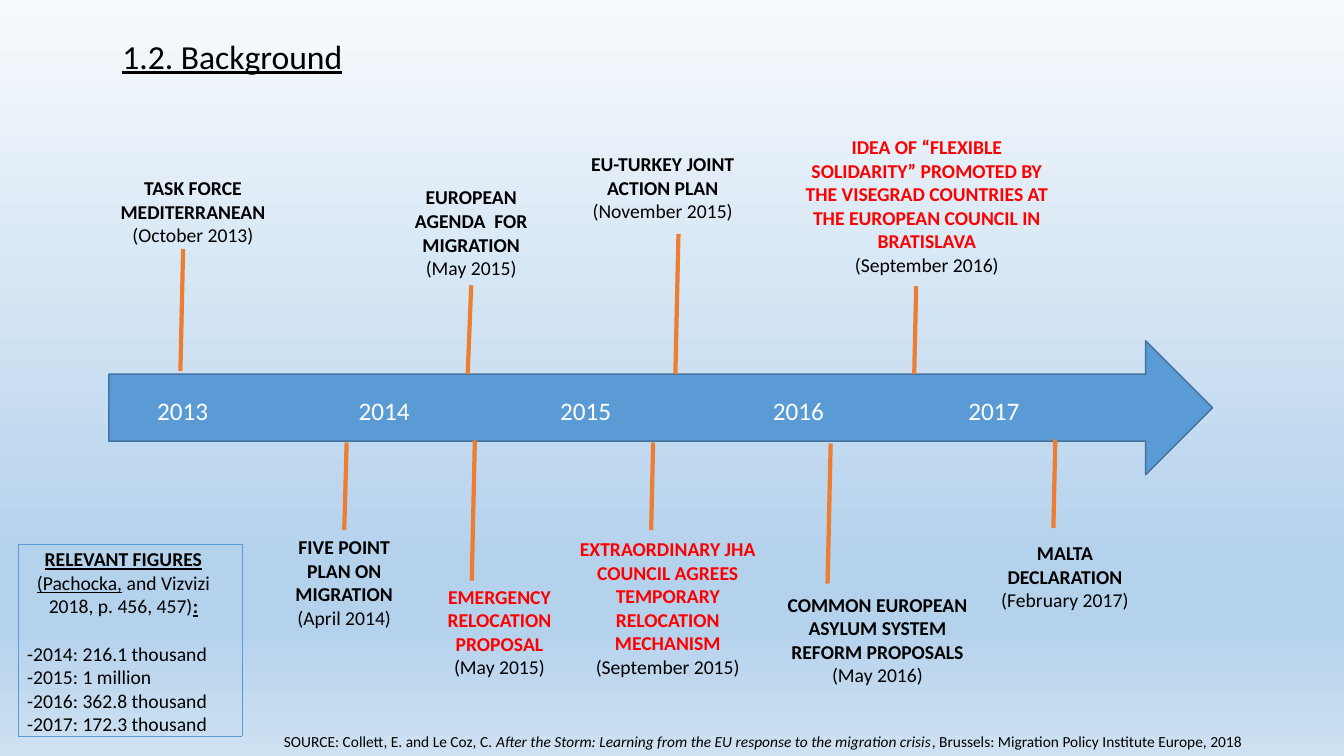
from dataclasses import dataclass

from lxml import etree
from pptx import Presentation
from pptx.dml.color import RGBColor
from pptx.enum.shapes import MSO_CONNECTOR, MSO_SHAPE
from pptx.enum.text import MSO_ANCHOR, MSO_AUTO_SIZE, PP_ALIGN
from pptx.oxml.ns import qn
from pptx.util import Inches, Pt

CENTER, LEFT = PP_ALIGN.CENTER, PP_ALIGN.LEFT
TOP = MSO_ANCHOR.TOP
GROW, FIXED = MSO_AUTO_SIZE.SHAPE_TO_FIT_TEXT, MSO_AUTO_SIZE.NONE
ARROW, STRAIGHT = MSO_SHAPE.RIGHT_ARROW, MSO_CONNECTOR.STRAIGHT
TOP_SITE, BOTTOM_SITE = 0, 2
TITLE_ONLY = 5
CELL = Inches(0.1)
COLS, ROWS = 133.33, 75


@dataclass(frozen=True)
class Theme:
    """Colours, font and type sizes of the slide."""
    font: str = "Calibri"
    ink: str = "000000"
    hot: str = "FF0000"
    light: str = "FFFFFF"
    arrow: str = "5B9BD5"
    arrow_edge: str = "43739E"
    stem: str = "ED7D31"
    title: int = 24
    year: int = 18
    body: int = 14
    source: int = 11
    sky: tuple = ((0, "F7FAFD"), (74, "B5D2EC"), (83, "B5D2EC"), (100, "CEE1F2"))


T = Theme()
YEARS = ("2013", "2014", "2015", "2016", "2017")
YEAR_STOPS = (20, 40, 61.1, 80.5)

# Label box, heading, date, colour, stem foot column, stem foot row, stem top row
EVENTS = (
    ((0.6, 5, 21.1, 8.1), "TASK FORCE MEDITERRANEAN", "October 2013", T.ink, (9.9, 24.8, 12.7)),
    ((18.7, 40.6, 14.9, 10.4), "FIVE POINT PLAN ON MIGRATION", "April 2014", T.ink, (26.2, 40.6, 31.9)),
    ((31.3, 5.9, 14.9, 10.4), "EUROPEAN AGENDA  FOR MIGRATION", "May 2015", T.ink, (38.4, 25.1, 16.4)),
    ((34.1, 45.5, 14.9, 10.4), "EMERGENCY RELOCATION PROPOSAL", "May 2015", T.hot, (38.8, 45.6, 31.7)),
    ((49.3, 2.6, 16.9, 8.1), "EU-TURKEY JOINT ACTION PLAN", "November 2015", T.ink, (59, 25.1, 11.2)),
    ((68.1, 46.3, 21.9, 10.4), "COMMON EUROPEAN ASYLUM SYSTEM REFORM PROPOSALS", "May 2016", T.ink,
     (74.1, 45.9, 32)),
    ((47.3, 40.8, 21.9, 15.1), "EXTRAORDINARY JHA COUNCIL AGREES TEMPORARY RELOCATION MECHANISM",
     "September 2015", T.hot, (56.6, 40.6, 31.9)),
    ((89.2, 41.2, 16.9, 8.1), "MALTA DECLARATION", "February 2017", T.ink, (96.5, 40.4, 31.6)),
    ((70.4, 0.9, 27.1, 15.1),
     "IDEA OF “FLEXIBLE SOLIDARITY” PROMOTED BY THE VISEGRAD COUNTRIES AT THE EUROPEAN COUNCIL IN BRATISLAVA",
     "September 2016", T.hot, (82.7, 25.1, 16.4)),
)
FIGURES = ("-2014: 216.1 thousand", "-2015: 1 million", "-2016: 362.8 thousand", "-2017: 172.3 thousand")


def grid(*cells):
    """Turn grid columns and rows into lengths."""
    return [round(c * CELL) for c in cells]


def within(area, box):
    """Shift a box by the corner of its area."""
    return (area[0] + box[0], area[1] + box[1], *box[2:])


def write(p, text, size=T.body, color=T.ink, bold=False, italic=False, underline=False, align=CENTER):
    """Add one formatted run to a paragraph."""
    p.alignment = align
    r = p.add_run()
    r.text = text
    f = r.font
    f.name, f.size, f.color.rgb = T.font, Pt(size), RGBColor.from_string(color)
    f.bold, f.italic, f.underline = bold, italic, underline


def text_box(s, box):
    """Add a wrapping text box that grows with its text."""
    sp = s.shapes.add_textbox(*grid(*box))
    sp.text_frame.word_wrap = True
    sp.text_frame.auto_size = GROW
    return sp


def background(s):
    """Fill the slide with the vertical sky gradient."""
    fill = s.background.fill
    fill.gradient()
    fill.gradient_angle = 270
    stops = next(s.element.iter(qn("a:gsLst")))
    for old in list(stops):
        stops.remove(old)
    for share, color in T.sky:
        stop = etree.SubElement(stops, qn("a:gs"), pos=str(share * 1000))
        etree.SubElement(stop, qn("a:srgbClr"), val=color)


def title(s, box):
    """Place the underlined heading."""
    sp = s.shapes.title
    sp.left, sp.top, sp.width, sp.height = grid(*box)
    tf = sp.text_frame
    tf.vertical_anchor, tf.auto_size = TOP, FIXED
    p = tf.paragraphs[0]
    p.line_spacing = 0.9
    write(p, "1.2. Background", size=T.title, underline=True)


def year_arrow(s, box):
    """Draw the arrow and the years along it."""
    sp = s.shapes.add_shape(ARROW, *grid(*box))
    sp.shadow.inherit = False
    sp.fill.solid()
    sp.fill.fore_color.rgb = RGBColor.from_string(T.arrow)
    sp.line.color.rgb = RGBColor.from_string(T.arrow_edge)
    sp.line.width = Pt(1)
    p = text_box(s, within(box, (3.8, 4.9, 91.4, 4))).text_frame.paragraphs[0]
    write(p, "\t".join(YEARS), size=T.year, color=T.light, align=LEFT)
    tabs = etree.SubElement(p._p.get_or_add_pPr(), qn("a:tabLst"))
    for stop in grid(*YEAR_STOPS):
        etree.SubElement(tabs, qn("a:tab"), pos=str(stop), algn="l")


def event(s, box, heading, date, color, foot, low, high):
    """Place one event label and its leaning stem."""
    sp = text_box(s, box)
    tf = sp.text_frame
    write(tf.paragraphs[0], heading, color=color, bold=True)
    write(tf.add_paragraph(), f"({date})")
    head = foot + (low - high) / 45
    stem = s.shapes.add_connector(STRAIGHT, *grid(foot, low, head, high))
    stem.line.color.rgb = RGBColor.from_string(T.stem)
    stem.line.width = Pt(3)
    etree.SubElement(stem._element.spPr, qn("a:effectLst"))
    middle, below = box[0] + box[2] / 2, box[1] > high
    if below and abs(foot - middle) < 0.2:
        stem.begin_connect(sp, TOP_SITE)
    elif not below and abs(head - middle) < 0.2:
        stem.end_connect(sp, BOTTOM_SITE)


def timeline(s, area):
    """Lay out the arrow and all events in the area."""
    year_arrow(s, within(area, (2.8, 21.8, 109.5, 13.3)))
    for box, heading, date, color, (foot, low, high) in EVENTS:
        event(s, within(area, box), heading, date, color, area[0] + foot, area[1] + low, area[1] + high)


def figures(s, box):
    """Write the relevant figures inside a thin one-cell frame."""
    tf = text_box(s, within(box, (-0.1, -0.2, 21.1, 19.9))).text_frame
    write(tf.paragraphs[0], "RELEVANT FIGURES", bold=True, underline=True)
    p = tf.add_paragraph()
    write(p, "(Pachocka,", underline=True)
    write(p, " and Vizvizi 2018, p. 456, 457)")
    write(p, ":", bold=True, underline=True)
    for i, figure in enumerate(FIGURES):
        p = tf.add_paragraph()
        p.space_before = Pt(0 if i else 17)
        write(p, figure, align=LEFT)
    table = s.shapes.add_table(1, 1, *grid(*box)).table
    table.first_row = table.horz_banding = False
    cell = table.cell(0, 0)
    props = cell._tc.get_or_add_tcPr()
    for side in ("a:lnL", "a:lnR", "a:lnT", "a:lnB"):
        ln = etree.SubElement(props, qn(side), w=str(Pt(0.5)))
        etree.SubElement(etree.SubElement(ln, qn("a:solidFill")), qn("a:srgbClr"), val=T.arrow)
    cell.fill.background()


def source(s, box):
    """Write the source line."""
    p = text_box(s, box).text_frame.paragraphs[0]
    write(p, "SOURCE: Collett, E. and Le Coz, C. ", size=T.source)
    write(p, "After the Storm: Learning from the EU response to the migration crisis", size=T.source, italic=True)
    write(p, ", Brussels: Migration Policy Institute Europe, 2018", size=T.source)


def main():
    """Build and save the slide."""
    prs = Presentation()
    prs.slide_width, prs.slide_height = grid(COLS, ROWS)
    s = prs.slides.add_slide(prs.slide_layouts[TITLE_ONLY])
    background(s)
    title(s, (-14.8, 3.5, 75.7, 9.7))
    timeline(s, (8, 12))
    figures(s, (1.8, 54, 22.2, 19))
    source(s, (18.1, 72.1, 115.2, 2.9))
    prs.save("out.pptx")


if __name__ == "__main__":
    main()
